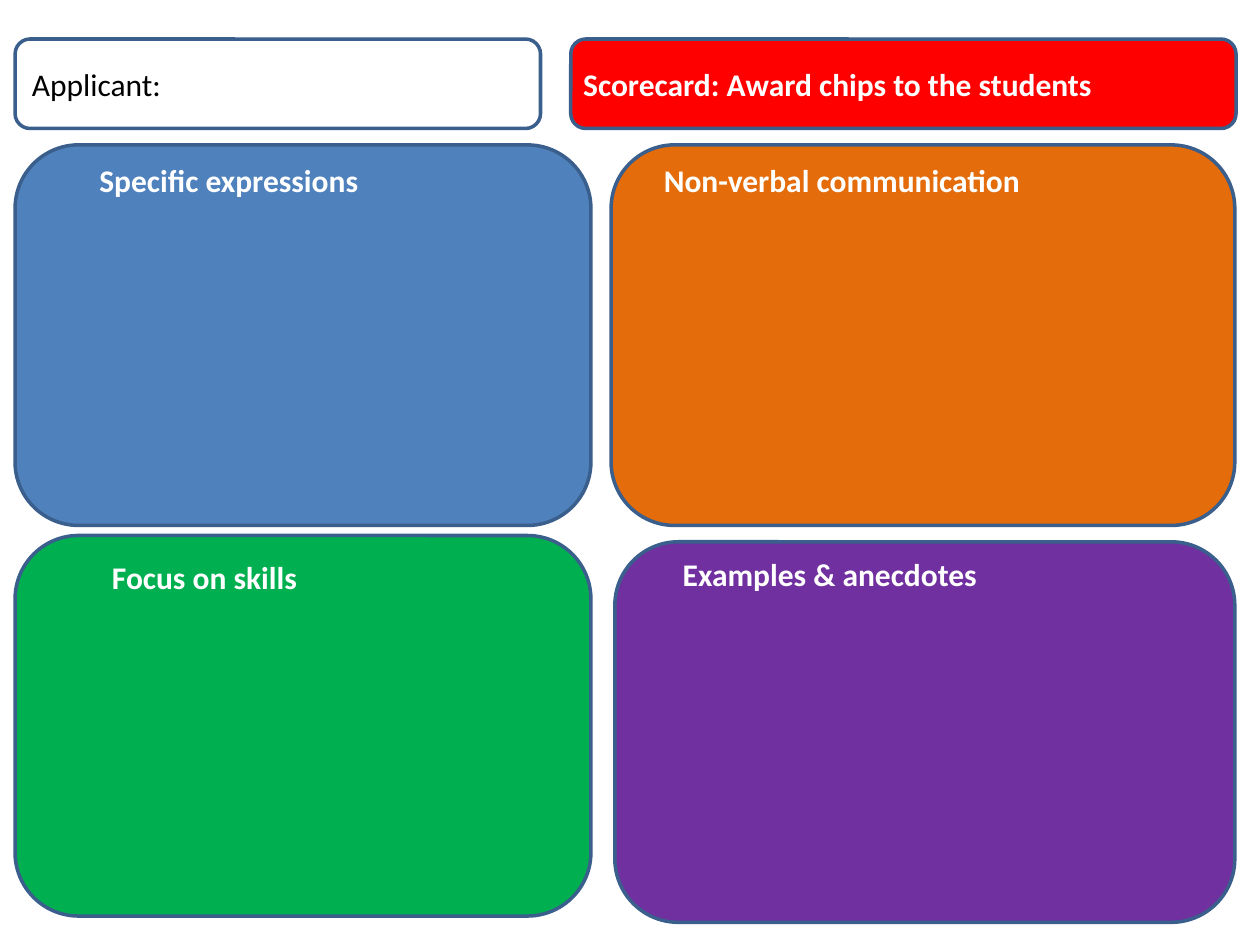
from pptx import Presentation
from pptx.dml.color import RGBColor
from pptx.enum import shapes, text
from pptx.util import Inches, Pt

COLORS = {
    "outline": "3A5F8C", "black": "000000", "white": "FFFFFF", "red": "FF0000",
    "blue": "4F81BD", "green": "00B050", "orange": "E46C0A", "purple": "7030A0",
}
HEADER_TOP, HEADER_HEIGHT = 0.31, 0.71
PANEL_HEIGHT = 3.02
LABEL_HEIGHT = 0.4
LEFT_EDGE, RIGHT_EDGE = 0.12, 9.8

APPLICANT = ("Applicant:", LEFT_EDGE, 4.17)
SCORECARD = ("Scorecard: Award chips to the students", 4.53, 5.28)
LABEL_WIDTH = 3.22
PANELS = [
    ("Specific expressions", "blue", LEFT_EDGE, 4.69, 1.15, (0.69, 1.23)),
    ("Focus on skills", "green", LEFT_EDGE, 4.69, 4.25, (0.79, 4.38)),
    ("Non-verbal communication", "orange", 4.85, RIGHT_EDGE, 1.15, (5.17, 1.23)),
    ("Examples & anecdotes", "purple", 4.88, RIGHT_EDGE, 4.3, (5.32, 4.36)),
]


def rgb(name):
    return RGBColor.from_string(COLORS[name])


def write(frame, words, color, bold):
    frame.word_wrap = True
    line = frame.paragraphs[0]
    line.text = words
    line.alignment = text.PP_ALIGN.LEFT
    line.font.name = "Calibri"
    line.font.size = Pt(18)
    line.font.bold = bold
    line.font.color.rgb = rgb(color)


def add_card(slide, left, top, width, height, fill=None):
    card = slide.shapes.add_shape(
        shapes.MSO_SHAPE.ROUNDED_RECTANGLE,
        Inches(left), Inches(top), Inches(width), Inches(height))
    card.shadow.inherit = False
    card.line.color.rgb = rgb("outline")
    card.line.width = Pt(2)
    if fill:
        card.fill.solid()
        card.fill.fore_color.rgb = rgb(fill)
    else:
        card.fill.background()
    return card


def add_label(slide, words, left, top, width):
    label = slide.shapes.add_textbox(
        Inches(left), Inches(top), Inches(width), Inches(LABEL_HEIGHT))
    label.text_frame.auto_size = text.MSO_AUTO_SIZE.SHAPE_TO_FIT_TEXT
    write(label.text_frame, words, "white", True)


def main():
    deck = Presentation()
    deck.slide_width, deck.slide_height = Inches(10), Inches(7.5)
    slide = deck.slides.add_slide(deck.slide_layouts[6])

    words, left, width = APPLICANT
    applicant = add_card(slide, left, HEADER_TOP, width, HEADER_HEIGHT)
    applicant.text_frame.vertical_anchor = text.MSO_ANCHOR.MIDDLE
    write(applicant.text_frame, words, "black", False)

    for _, fill, left, right, top, _ in PANELS:
        add_card(slide, left, top, right - left, PANEL_HEIGHT, fill)

    words, left, width = SCORECARD
    add_card(slide, left, HEADER_TOP, width, HEADER_HEIGHT, "red")
    label_top = HEADER_TOP + (HEADER_HEIGHT - LABEL_HEIGHT) / 2
    add_label(slide, words, left, label_top, width)

    for words, _, _, _, _, (left, top) in PANELS:
        add_label(slide, words, left, top, LABEL_WIDTH)

    deck.save("out.pptx")


if __name__ == "__main__":
    main()
